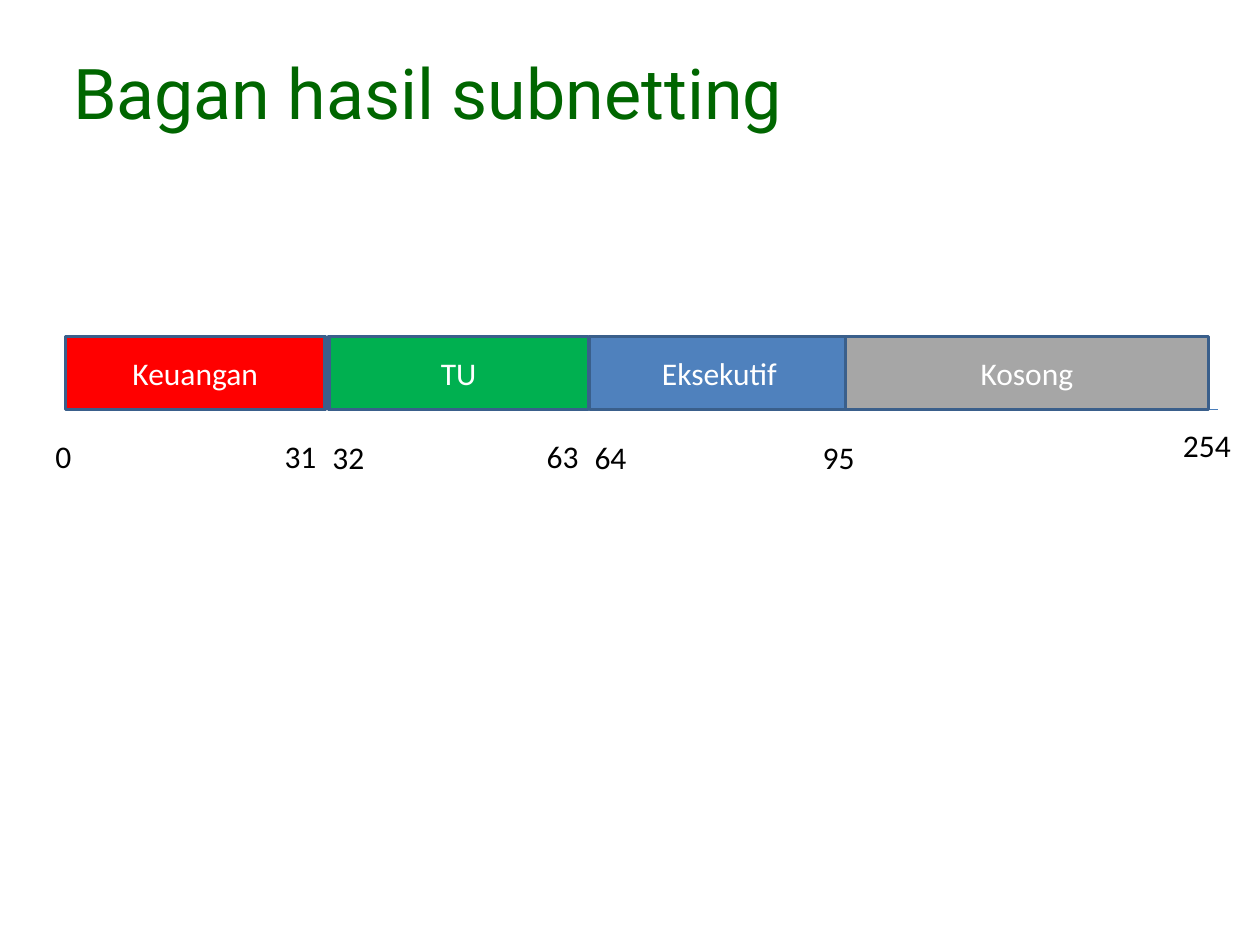
"""Build the slide that shows the subnetting result as a bar of address blocks."""
from lxml.etree import SubElement
from pptx import Presentation
from pptx.dml.color import RGBColor
from pptx.enum.shapes import MSO_CONNECTOR, MSO_SHAPE
from pptx.enum.text import MSO_ANCHOR, MSO_AUTO_SIZE, PP_ALIGN
from pptx.oxml.ns import qn
from pptx.util import Inches, Pt

GREEN = RGBColor(0x00, 0x66, 0x00)
BLACK = RGBColor(0x00, 0x00, 0x00)
WHITE = RGBColor(0xFF, 0xFF, 0xFF)
EDGE = RGBColor(0x3A, 0x5F, 0x8B)
RULE = RGBColor(0x4A, 0x7E, 0xBB)

TITLE = "Bagan hasil subnetting"
TOP, HIGH = 2.67, 0.58
BLOCKS = [
    ("Keuangan", 0.52, 2.06, RGBColor(0xFF, 0x00, 0x00)),
    ("TU", 2.61, 2.06, RGBColor(0x00, 0xB0, 0x50)),
    ("Eksekutif", 4.68, 2.06, RGBColor(0x4F, 0x81, 0xBD)),
    ("Kosong", 6.71, 2.88, RGBColor(0xA6, 0xA6, 0xA6)),
]
MARKS = [
    ("0", 0.34, 3.42, 0.35),
    ("31", 2.16, 3.42, 0.51),
    ("32", 2.54, 3.43, 0.51),
    ("63", 4.24, 3.42, 0.51),
    ("64", 4.62, 3.43, 0.51),
    ("95", 6.43, 3.43, 0.51),
    ("254", 9.29, 3.33, 0.67),
]
RULES = [(TOP + HIGH, 9.67), (TOP, 6.69)]


def write(shape, text, size=18, face="Calibri", color=BLACK,
          align=PP_ALIGN.LEFT, anchor=MSO_ANCHOR.TOP, wrap=True):
    frame = shape.text_frame
    frame.text = text
    frame.auto_size = MSO_AUTO_SIZE.NONE
    frame.word_wrap = wrap
    frame.vertical_anchor = anchor
    line = frame.paragraphs[0]
    line.alignment = align
    font = line.runs[0].font
    font.size, font.name, font.color.rgb = Pt(size), face, color
    return frame


def main():
    deck = Presentation()
    deck.slide_width, deck.slide_height = Inches(10), Inches(7.5)
    slide = deck.slides.add_slide(deck.slide_layouts[5])
    shapes = slide.shapes

    title = shapes.title
    title.left, title.top = Inches(0.5), Inches(0.42)
    title.width, title.height = Inches(6.5), Inches(0.67)
    frame = write(title, TITLE, size=40, face="Roboto", color=GREEN,
                  anchor=MSO_ANCHOR.BOTTOM)
    frame.margin_left = frame.margin_right = Inches(0.08)
    frame.margin_top = frame.margin_bottom = Inches(0.03)

    for y, end in RULES:
        rule = shapes.add_connector(MSO_CONNECTOR.STRAIGHT, Inches(BLOCKS[0][1]),
                                    Inches(y), Inches(end), Inches(y))
        rule.line.color.rgb, rule.line.width = RULE, Pt(0.75)
        SubElement(rule._element.spPr, qn("a:effectLst"))

    for text, x, y, wide in MARKS:
        mark = shapes.add_textbox(Inches(x), Inches(y), Inches(wide), Inches(0.4))
        write(mark, text, wrap=False)

    for text, x, wide, fill in BLOCKS:
        block = shapes.add_shape(MSO_SHAPE.RECTANGLE, Inches(x), Inches(TOP),
                                 Inches(wide), Inches(HIGH))
        block.shadow.inherit = False
        block.fill.solid()
        block.fill.fore_color.rgb = fill
        block.line.color.rgb, block.line.width = EDGE, Pt(2)
        write(block, text, color=WHITE, align=PP_ALIGN.CENTER,
              anchor=MSO_ANCHOR.MIDDLE)

    deck.save("out.pptx")


if __name__ == "__main__":
    main()
